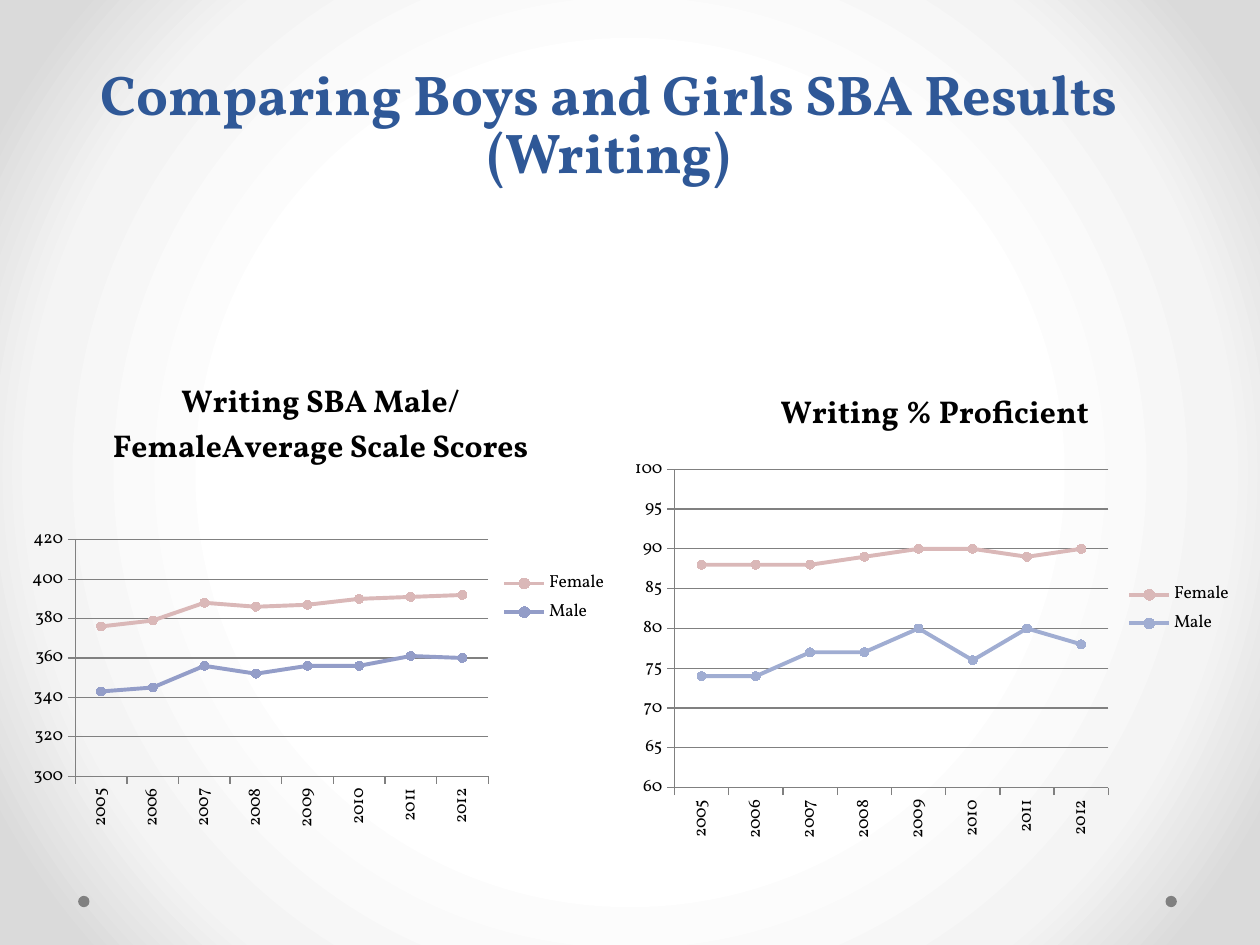
from pptx import Presentation
from pptx.chart.data import CategoryChartData
from pptx.dml.color import RGBColor
from pptx.enum.chart import XL_CHART_TYPE, XL_LEGEND_POSITION, XL_MARKER_STYLE, XL_TICK_MARK
from pptx.enum.shapes import MSO_SHAPE
from pptx.enum.text import MSO_ANCHOR, PP_ALIGN
from pptx.oxml import parse_xml
from pptx.oxml.ns import nsdecls
from pptx.util import Inches, Pt

LINE_MARKERS = XL_CHART_TYPE.LINE_MARKERS
LEGEND_RIGHT = XL_LEGEND_POSITION.RIGHT
CIRCLE = XL_MARKER_STYLE.CIRCLE
TICK_OUTSIDE = XL_TICK_MARK.OUTSIDE
OVAL = MSO_SHAPE.OVAL
MIDDLE = MSO_ANCHOR.MIDDLE
CENTER = PP_ALIGN.CENTER

TITLE_BLUE = RGBColor(0x2F, 0x58, 0x97)
GRAY = RGBColor(0x80, 0x80, 0x80)
BLACK = RGBColor(0, 0, 0)
PINK = RGBColor(0xDA, 0xB8, 0xB8)
LIGHT_BLUE = RGBColor(0xA0, 0xAD, 0xD2)
VIOLET_BLUE = RGBColor(0x93, 0x9D, 0xC8)

FONT = "Vollkorn"
YEARS = [str(year) for year in range(2005, 2013)]
BACKGROUND_STOPS = [(50, "FFFFFF"), (76, "F4F4F4"), (92, "DADADA")]


def apply_format(target, values):
    for name, value in values.items():
        setattr(target, name, value)


class SlideBuilder:
    """Holds the text style and the current slide, and adds its elements."""

    def __init__(self, slide, font_name):
        self.slide = slide
        self.font_name = font_name

    def style_font(self, font, size, color, bold=False):
        apply_format(font, {"name": self.font_name, "size": Pt(size), "bold": bold})
        font.color.rgb = color

    def add_background(self, stops):
        stop_xml = "".join(
            f'<a:gs pos="{position * 1000}"><a:srgbClr val="{color}"/></a:gs>'
            for position, color in stops
        )
        background = parse_xml(
            f'<p:bg {nsdecls("p", "a")}><p:bgPr><a:gradFill rotWithShape="1">'
            f'<a:gsLst>{stop_xml}</a:gsLst><a:path path="circle">'
            '<a:fillToRect l="50000" t="50000" r="50000" b="50000"/></a:path>'
            "</a:gradFill><a:effectLst/></p:bgPr></p:bg>"
        )
        self.slide.element.cSld.insert(0, background)

    def add_dot(self, left, top, size):
        shape = self.slide.shapes.add_shape(
            OVAL, Inches(left), Inches(top), Inches(size), Inches(size)
        )
        shape.shadow.inherit = False
        shape.fill.solid()
        shape.fill.fore_color.rgb = GRAY
        shape.line.fill.background()

    def add_title(self, lines, left, top, width, height):
        box = self.slide.shapes.add_textbox(
            Inches(left), Inches(top), Inches(width), Inches(height)
        )
        frame = box.text_frame
        apply_format(frame, {"word_wrap": True, "vertical_anchor": MIDDLE})
        frame.text = "\n".join(lines)
        for paragraph in frame.paragraphs:
            apply_format(paragraph, {"alignment": CENTER, "line_spacing": 0.86})
            self.style_font(paragraph.runs[0].font, 32, TITLE_BLUE, True)

    def add_line_chart(self, title, series_list, scale, box, plot):
        data = CategoryChartData()
        data.categories = YEARS
        for name, values, _ in series_list:
            data.add_series(name, values)
        chart = self.slide.shapes.add_chart(
            LINE_MARKERS, *(Inches(length) for length in box), data
        ).chart
        self.style_font(chart.font, 10, BLACK)

        chart.chart_title.text_frame.text = title
        run = chart.chart_title.text_frame.paragraphs[0].runs[0]
        self.style_font(run.font, 18, BLACK, True)
        chart.has_legend = True
        apply_format(
            chart.legend, {"position": LEGEND_RIGHT, "include_in_layout": False}
        )

        minimum, maximum, step = scale
        apply_format(
            chart.value_axis,
            {"minimum_scale": minimum, "maximum_scale": maximum, "major_unit": step},
        )
        for axis in (chart.category_axis, chart.value_axis):
            axis.major_tick_mark = TICK_OUTSIDE
            self.style_line(axis.format.line, GRAY, 0.75)
        self.style_line(chart.value_axis.major_gridlines.format.line, GRAY, 0.75)
        chart.category_axis.tick_labels.font.size = Pt(10)
        body = chart.category_axis.tick_labels.font._element.getparent().getparent().getparent()
        body.bodyPr.set("rot", "-5400000")

        for series, (_, _, color) in zip(chart.plots[0].series, series_list):
            series.smooth = False
            self.style_line(series.format.line, color, 2.25)
            apply_format(series.marker, {"style": CIRCLE, "size": 5})
            series.marker.format.fill.solid()
            series.marker.format.fill.fore_color.rgb = color
            self.style_line(series.marker.format.line, color, 0.75)
        self.place_plot(chart, plot)

    def style_line(self, line, color, width):
        line.color.rgb = color
        line.width = Pt(width)

    def place_plot(self, chart, plot):
        sizes = "".join(
            f'<c:{name} val="{value}"/>' for name, value in zip("xywh", plot)
        )
        layout = parse_xml(
            f'<c:layout {nsdecls("c")}><c:manualLayout><c:layoutTarget val="inner"/>'
            f'<c:xMode val="edge"/><c:yMode val="edge"/>{sizes}'
            "</c:manualLayout></c:layout>"
        )
        plot_area = chart.element.chart.plotArea
        for previous in plot_area.xpath("c:layout"):
            plot_area.remove(previous)
        plot_area.insert(0, layout)


def main():
    presentation = Presentation()
    presentation.slide_width = Inches(10)
    presentation.slide_height = Inches(7.5)
    slide = presentation.slides.add_slide(presentation.slide_layouts[6])
    builder = SlideBuilder(slide, FONT)
    builder.add_background(BACKGROUND_STOPS)
    for left in (9.25, 0.62):
        builder.add_dot(left, 7.11, 0.09)
    builder.add_title(
        ["Comparing Boys and Girls SBA Results", "(Writing)"], 0.67, 0.42, 8.33, 1.18
    )
    builder.add_line_chart(
        "Writing % Proficient",
        [
            ("Female", [88, 88, 88, 89, 90, 90, 89, 90], PINK),
            ("Male", [74, 74, 77, 77, 80, 76, 80, 78], LIGHT_BLUE),
        ],
        (60, 100, 5),
        (4.96, 2.92, 4.92, 3.83),
        (0.08, 0.21, 0.7, 0.66),
    )
    builder.add_line_chart(
        "Writing SBA Male/FemaleAverage Scale Scores",
        [
            ("Female", [376, 379, 388, 386, 387, 390, 391, 392], PINK),
            ("Male", [343, 345, 356, 352, 356, 356, 361, 360], VIOLET_BLUE),
        ],
        (300, 420, 20),
        (0.17, 2.83, 4.75, 3.83),
        (0.09, 0.38, 0.69, 0.49),
    )
    presentation.save("out.pptx")


if __name__ == "__main__":
    main()
